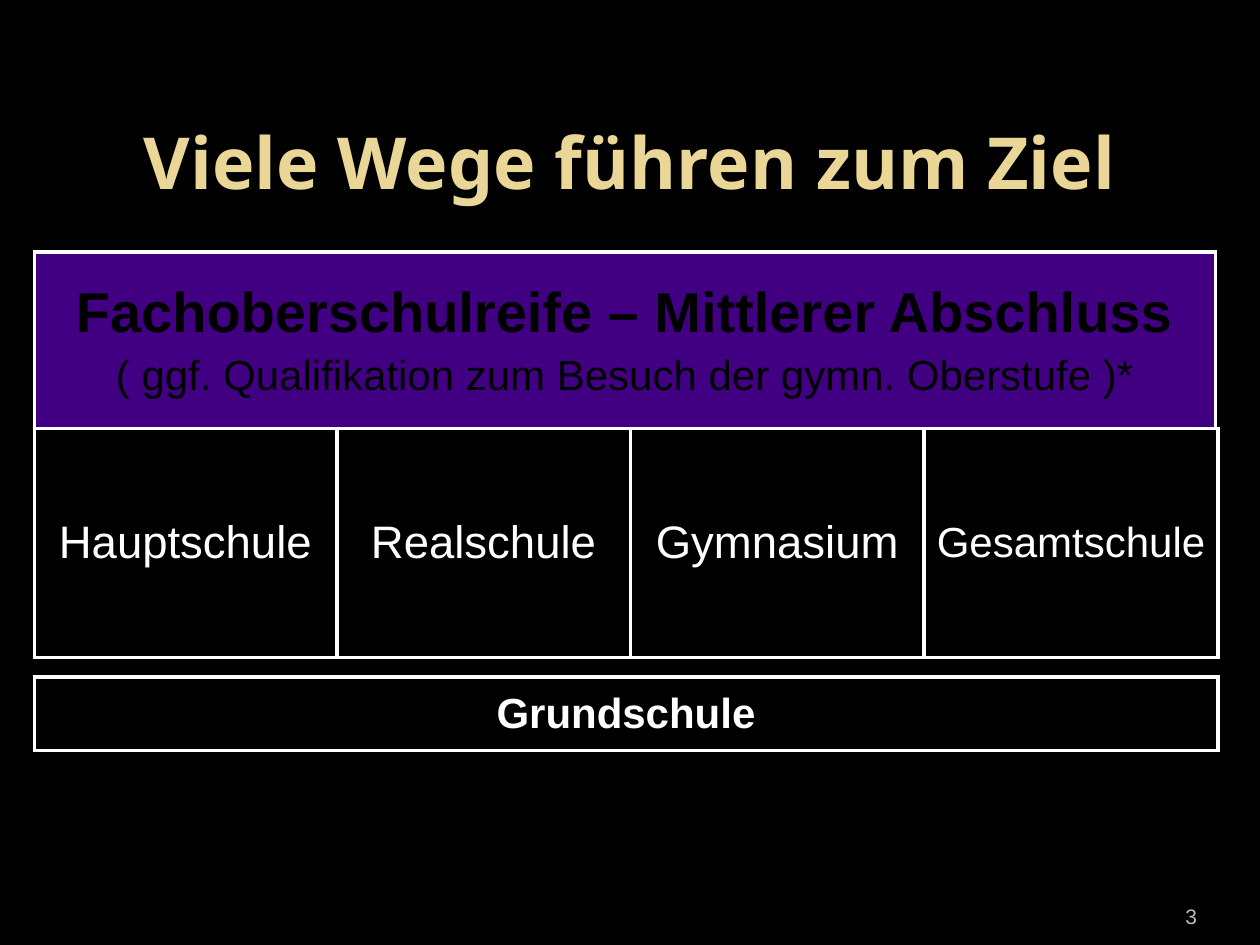
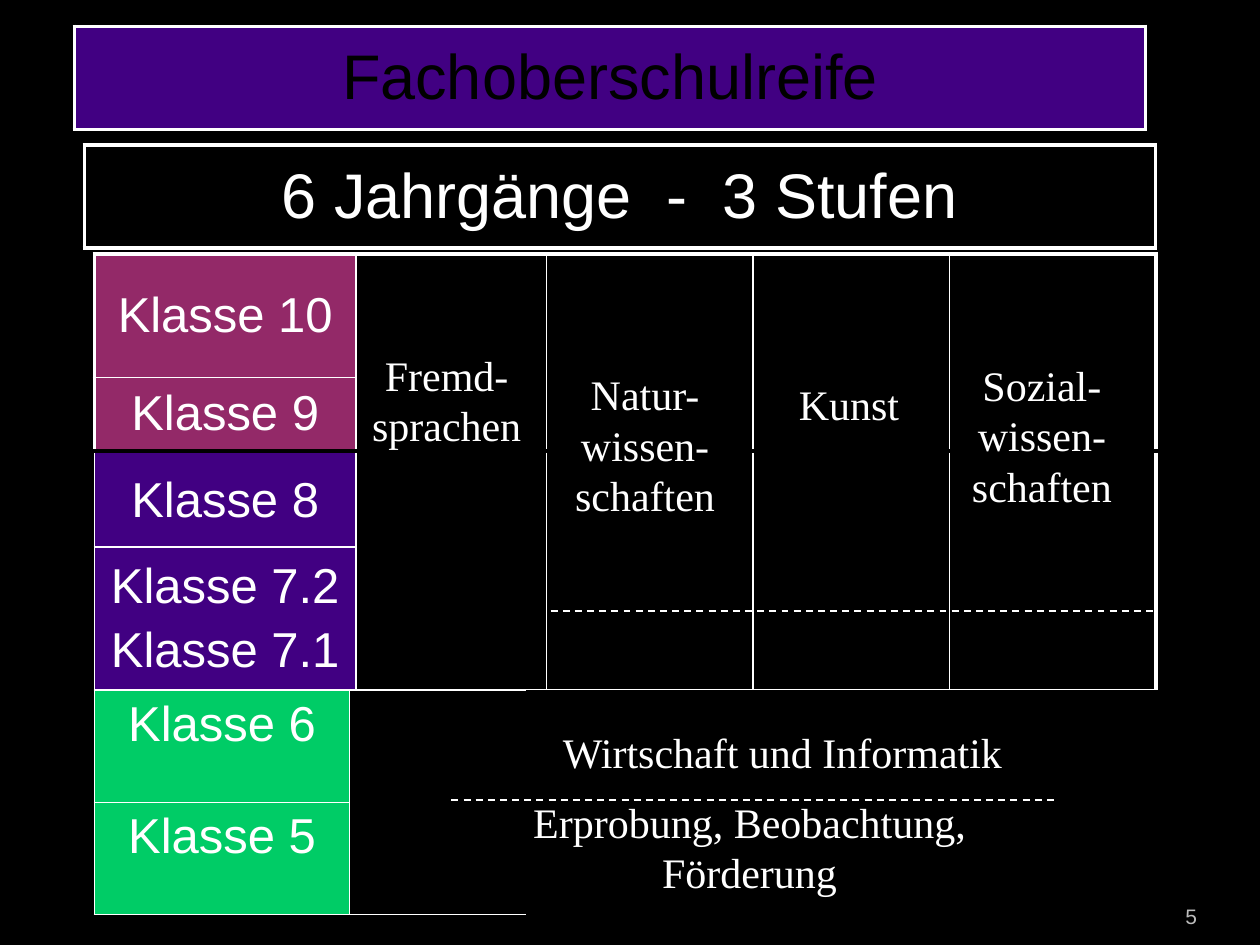
from lxml import etree
from pptx import Presentation
from pptx import util as u
from pptx.dml.color import RGBColor
from pptx.enum import dml, shapes, text
from pptx.oxml import ns

BLACK = RGBColor(0x00, 0x00, 0x00)
WHITE = RGBColor(0xFF, 0xFF, 0xFF)
SAND = RGBColor(0xEA, 0xD6, 0x96)
GREY = RGBColor(0xBC, 0xBC, 0xBC)
PURPLE = RGBColor(0x41, 0x00, 0x82)
PLUM = RGBColor(0x93, 0x29, 0x68)
GREEN = RGBColor(0x00, 0xCC, 0x66)

SANS = "Arial"
SERIF = "Times New Roman"
TITLE_FONT = "Noto Sans"
NO_STYLE = "{2D5ABB26-0587-4C30-8999-92F81FD0307C}"

THIN, THICK = 1, 2.25
CENTER, LEFT, RIGHT = text.PP_ALIGN.CENTER, text.PP_ALIGN.LEFT, text.PP_ALIGN.RIGHT
MIDDLE, TOP, BOTTOM = text.MSO_ANCHOR.MIDDLE, text.MSO_ANCHOR.TOP, text.MSO_ANCHOR.BOTTOM


# --- Shared building blocks ---

def write_line(frame, line, size, color, font=SANS, bold=False, align=CENTER, spacing=0):
    """Fill the empty first paragraph, or add a further one."""
    paragraph = frame.paragraphs[0]
    if paragraph.runs:
        paragraph = frame.add_paragraph()
        paragraph.space_before = u.Pt(spacing)
    paragraph.alignment = align
    run = paragraph.add_run()
    run.text = line
    run.font.name = font
    run.font.size = u.Pt(size)
    run.font.bold = bold
    run.font.color.rgb = color


def add_text(slide, box, lines, size, color, font=SERIF, bold=False, align=CENTER,
             anchor=TOP, side_inset=0.25, wrap=True):
    frame = slide.shapes.add_textbox(*map(u.Cm, box)).text_frame
    frame.word_wrap = wrap
    frame.vertical_anchor = anchor
    frame.margin_left = frame.margin_right = u.Cm(side_inset)
    for line in lines:
        write_line(frame, line, size, color, font, bold, align)


def add_grid(slide, left, top, columns, rows):
    """Add an unstyled table with the given column widths and row heights."""
    frame = slide.shapes.add_table(len(rows), len(columns), u.Cm(left), u.Cm(top),
                                   u.Cm(sum(columns)), u.Cm(sum(rows)))
    table = frame.table
    table.first_row = table.horz_banding = False
    table._tbl.tblPr.find(ns.qn("a:tableStyleId")).text = NO_STYLE
    for column, width in zip(table.columns, columns):
        column.width = u.Cm(width)
    for row, height in zip(table.rows, rows):
        row.height = u.Cm(height)
    return table


def format_cell(cell, borders, fill=None, anchor=MIDDLE):
    """Borders map the sides L, R, T and B to widths in points."""
    properties = cell._tc.get_or_add_tcPr()
    for side in "LRTB":
        if side in borders:
            line = etree.SubElement(properties, ns.qn(f"a:ln{side}"),
                                    w=str(u.Pt(borders[side])))
            solid = etree.SubElement(line, ns.qn("a:solidFill"))
            etree.SubElement(solid, ns.qn("a:srgbClr"), val=str(WHITE))
    if fill is None:
        cell.fill.background()
    else:
        cell.fill.solid()
        cell.fill.fore_color.rgb = fill
    cell.vertical_anchor = anchor


def add_panel(slide, box, fill=None, sides="LRTB"):
    """Add a framed one-cell table and return its text frame."""
    left, top, width, height = box
    cell = add_grid(slide, left, top, [width], [height]).cell(0, 0)
    format_cell(cell, dict.fromkeys(sides, THICK), fill)
    return cell.text_frame


def add_dashes(slide, left, right, height):
    line = slide.shapes.add_connector(shapes.MSO_CONNECTOR.STRAIGHT, u.Cm(left),
                                      u.Cm(height), u.Cm(right), u.Cm(height))
    line.line.color.rgb = WHITE
    line.line.width = u.Pt(THIN)
    line.line.dash_style = dml.MSO_LINE.DASH
    etree.SubElement(line._element.spPr, ns.qn("a:effectLst"))


def add_black_slide(presentation, number):
    slide = presentation.slides.add_slide(presentation.slide_layouts[6])
    slide.background.fill.solid()
    slide.background.fill.fore_color.rgb = BLACK
    add_text(slide, (22.02, 17.82, 2.11, 1.02), [str(number)], 12, GREY, SANS,
             align=RIGHT, anchor=BOTTOM, side_inset=0)
    return slide


# --- School types ---

def add_school_row(slide, box):
    left, top, width, height = box
    other_width = 5.92
    column_width = width - 3 * other_width
    sides = "LRTB"
    schools = [("Hauptschule", 26, CENTER), ("Realschule", 26, CENTER),
               ("Gymnasium", 26, CENTER), ("Gesamtschule", 24, LEFT)]
    for school, size, align in schools:
        frame = add_panel(slide, (left, top, column_width, height), sides=sides)
        write_line(frame, school, size, WHITE, align=align)
        left += column_width
        column_width, sides = other_width, "RTB"


def build_paths_slide(presentation):
    slide = add_black_slide(presentation, 3)
    add_text(slide, (1.9, 1.55, 21.6, 3.38), ["Viele Wege führen zum Ziel"], 41, SAND,
             TITLE_FONT, bold=True, anchor=MIDDLE)

    degree = add_panel(slide, (0.69, 5.08, 23.81, 3.56), PURPLE)
    write_line(degree, "Fachoberschulreife – Mittlerer Abschluss", 32, BLACK, bold=True)
    write_line(degree, "( ggf. Qualifikation zum Besuch der gymn. Oberstufe )*", 24, BLACK,
               spacing=4.8)

    add_school_row(slide, (0.69, 8.64, 23.86, 4.62))
    primary = add_panel(slide, (0.69, 13.65, 23.86, 1.48))
    write_line(primary, "Grundschule", 24, WHITE, bold=True)


# --- Classes and subjects ---

SUBJECT_COLUMNS = [5.28, 3.84, 4.16, 3.96, 4.16]


def add_stage(slide, left, top, rows, classes, fill, edge):
    """Two class rows beside subject columns; edge is the closed outer side, T or B."""
    table = add_grid(slide, left, top, SUBJECT_COLUMNS, rows)
    last = len(SUBJECT_COLUMNS) - 1
    is_upper = edge == "T"
    for column in range(1, last + 1):
        table.cell(0, column).merge(table.cell(1, column))
    for row, names in enumerate(classes):
        for column in range(last + 1):
            borders = {"L": THIN, "R": THICK if column == last else THIN}
            if not is_upper:
                borders["B"] = THIN
            elif row == 0:
                borders["T"] = THICK
            if column == 0:
                if is_upper:
                    borders["L"] = THICK
                borders["T" if row else "B"] = THIN
            format_cell(table.cell(row, column), borders, fill if column == 0 else None)
        for name in names:
            write_line(table.cell(row, 0).text_frame, name, 28, WHITE, spacing=5.6)


def add_subjects(slide, left, top):
    """Place the subject names over the columns of both stages."""
    subjects = [("Fremd-sprachen", 1.8, 3.81, 2.29),
                ("Natur-wissen-schaften", 2.19, 3.81, 3.3),
                ("Kunst ", 2.39, 4.24, 1.27),
                ("Sozial-wissen-schaften", 2.0, 3.81, 3.3)]
    for index, (subject, drop, width, height) in enumerate(subjects):
        box = (left + 5.2 + index * 4, top + drop, width, height)
        add_text(slide, box, [subject], 24, WHITE)
    add_dashes(slide, left + 9.2, left + 21.4, top + 7.19)


def add_trial_stage(slide, left, top):
    """Classes 5 and 6 with the half-open field and notes beside them."""
    table = add_grid(slide, left, top, [5.15, 3.56], [2.26, 2.26])
    for row, (name, edge) in enumerate([("Klasse 6", "T"), ("Klasse 5", "B")]):
        class_cell = table.cell(row, 0)
        format_cell(class_cell, dict.fromkeys("LRTB", THIN), GREEN, TOP)
        write_line(class_cell.text_frame, name, 28, WHITE)
        format_cell(table.cell(row, 1), dict.fromkeys("L" + edge, THIN))

    add_text(slide, (left + 9.2, top + 0.61, 9.65, 1.27), ["Wirtschaft und Informatik"],
             24, WHITE, align=LEFT, wrap=False)
    add_text(slide, (left + 8.4, top + 2.01, 9.62, 2.29),
             ["Erprobung, Beobachtung,", "Förderung"], 24, WHITE)
    add_dashes(slide, left + 7.2, left + 19.42, top + 2.21)


def build_stages_slide(presentation):
    slide = add_black_slide(presentation, 5)
    left, top = 1.9, 5.12
    add_stage(slide, left, top, [2.49, 1.44], [["Klasse 10"], ["Klasse 9"]], PLUM, "T")
    add_stage(slide, left, 9.13, [1.9, 2.87],
              [["Klasse 8"], ["Klasse 7.2", "Klasse 7.1"]], PURPLE, "B")
    add_subjects(slide, left, top)

    # Headings
    stages = add_panel(slide, (1.7, 2.92, 21.59, 2.08))
    write_line(stages, "6 Jahrgänge  -  3 Stufen", 36, WHITE)
    degree = add_panel(slide, (1.5, 0.53, 21.59, 2.08), PURPLE)
    write_line(degree, "Fachoberschulreife", 36, BLACK)

    add_trial_stage(slide, left, 13.92)


def main():
    presentation = Presentation()
    presentation.slide_width = u.Cm(25.4)
    presentation.slide_height = u.Cm(19.05)
    build_paths_slide(presentation)
    build_stages_slide(presentation)
    presentation.save("out.pptx")


if __name__ == "__main__":
    main()
